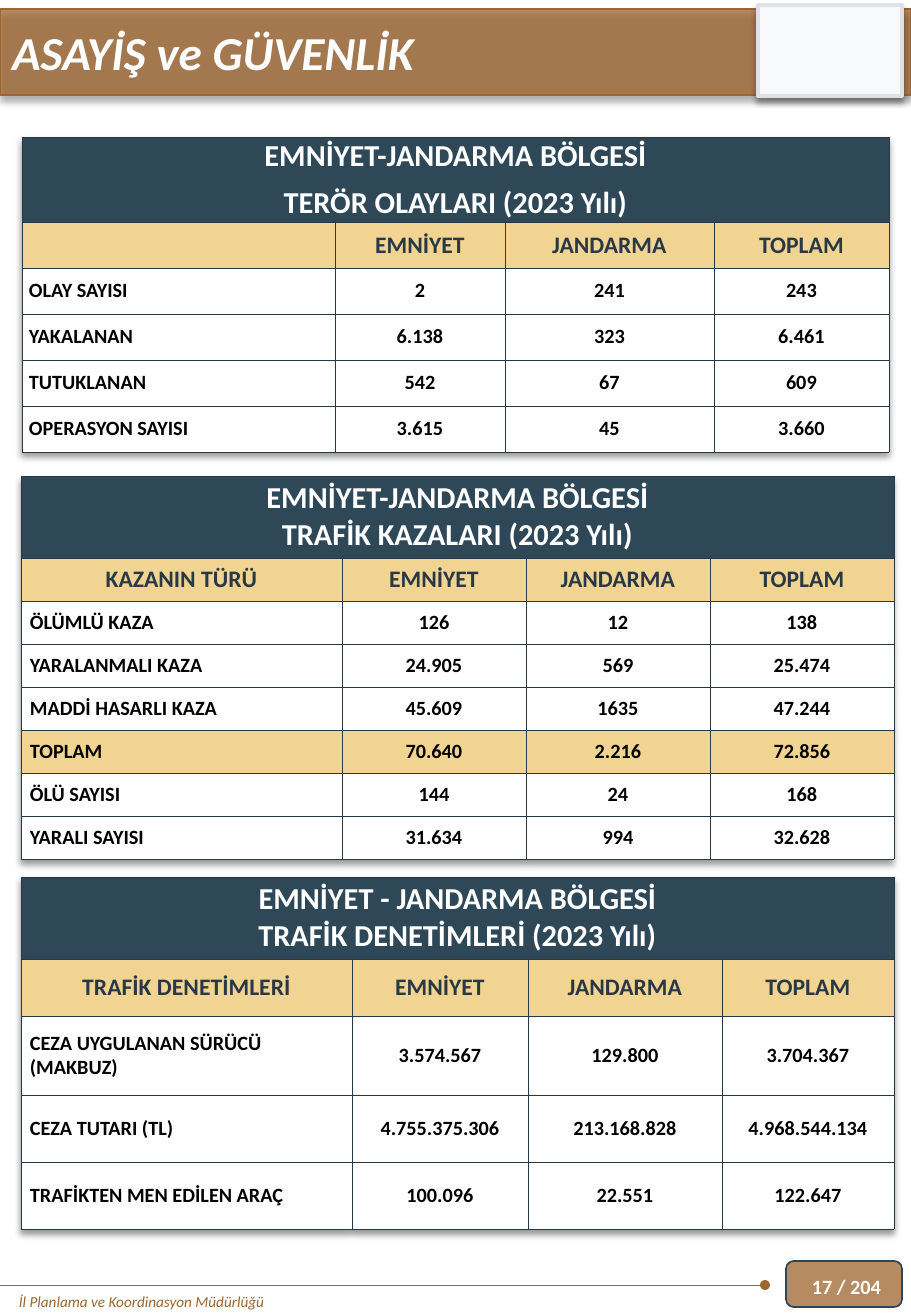
from dataclasses import dataclass

from lxml import etree
from pptx import Presentation
from pptx.dml.color import RGBColor
from pptx.enum.shapes import MSO_CONNECTOR, MSO_SHAPE
from pptx.enum.text import MSO_ANCHOR, MSO_AUTO_SIZE, PP_ALIGN
from pptx.oxml.ns import qn
from pptx.util import Pt

RECT = MSO_SHAPE.RECTANGLE
ROUND = MSO_SHAPE.ROUNDED_RECTANGLE
LINE = MSO_CONNECTOR.STRAIGHT
TOP = MSO_ANCHOR.TOP
MIDDLE = MSO_ANCHOR.MIDDLE
LEFT = PP_ALIGN.LEFT
CENTER = PP_ALIGN.CENTER
FIXED = MSO_AUTO_SIZE.NONE
SCALE = 914400 / 121.5


def px(n):
    return round(n * SCALE)


def rgb(code):
    return RGBColor.from_string(code)


def node(parent, tag, **attrs):
    return etree.SubElement(parent, qn(tag), attrs)


def shade(effects):
    drop = node(effects, "a:outerShdw", blurRad=str(Pt(4)), dist=str(Pt(3)),
                dir="5400000", algn="t", rotWithShape="0")
    color = node(drop, "a:srgbClr", val="000000")
    node(color, "a:alpha", val="40000")


@dataclass(frozen=True)
class Theme:
    font: str = "Calibri"
    brown: str = "9E652E"
    navy: str = "2F4858"
    ink: str = "283845"
    gold: str = "F2D492"
    white: str = "FFFFFF"
    black: str = "000000"
    pale: str = "F8F9FA"
    gray: str = "DEE2E6"
    title: int = 28
    head: int = 18
    label: int = 14
    body: int = 12
    foot: int = 9


class Deck:
    def __init__(self, theme, width, height):
        self.theme = theme
        self.prs = Presentation()
        self.prs.slide_width = px(width)
        self.prs.slide_height = px(height)
        self.slide = self.prs.slides.add_slide(self.prs.slide_layouts[5])

    def style(self, frame, size, color, align=LEFT, bold=True, italic=False, after=0):
        for par in frame.paragraphs:
            par.alignment = align
            par.space_after = Pt(after)
            font = par.font
            font.name = self.theme.font
            font.size = Pt(size)
            font.color.rgb = rgb(color)
            font.bold = bold
            font.italic = italic

    def title(self, text, *box):
        shape = self.slide.shapes.title
        shape.left, shape.top, shape.width, shape.height = map(px, box)
        frame = shape.text_frame
        frame.text = text
        frame.auto_size = FIXED
        frame.vertical_anchor = TOP
        self.style(frame, self.theme.title, self.theme.white, italic=True)
        shape.element.getparent().append(shape.element)

    def text(self, text, size, color, *box, anchor=TOP, **looks):
        frame = self.slide.shapes.add_textbox(*map(px, box)).text_frame
        frame.word_wrap = True
        frame.vertical_anchor = anchor
        frame.text = text
        self.style(frame, size, color, **looks)

    def block(self, kind, fill, edge, weight, *box, alpha=100, shadow=False):
        shape = self.slide.shapes.add_shape(kind, *map(px, box))
        shape.fill.solid()
        shape.fill.fore_color.rgb = rgb(fill)
        if alpha < 100:
            color = shape.element.spPr.find(qn("a:solidFill"))[0]
            node(color, "a:alpha", val=str(alpha * 1000))
        shape.line.color.rgb = rgb(edge)
        shape.line.width = Pt(weight)
        shape.shadow.inherit = False
        if shadow:
            shade(shape.element.spPr.find(qn("a:effectLst")))

    def rule(self, color, weight, *ends):
        line = self.slide.shapes.add_connector(LINE, *map(px, ends))
        line.line.color.rgb = rgb(color)
        line.line.width = Pt(weight)
        props = line.element.spPr
        node(props.find(qn("a:ln")), "a:headEnd", type="oval")
        node(props, "a:effectLst")

    def cell(self, cell, text, fill, size, color, align, pad, after=0):
        props = cell._tc.get_or_add_tcPr()
        for side in ("a:lnL", "a:lnR", "a:lnT", "a:lnB"):
            line = node(props, side, w=str(Pt(0.25)))
            node(node(line, "a:solidFill"), "a:srgbClr", val=self.theme.ink)
        cell.fill.solid()
        cell.fill.fore_color.rgb = rgb(fill)
        cell.margin_left = cell.margin_right = px(pad[0])
        cell.margin_top = cell.margin_bottom = px(pad[1])
        cell.vertical_anchor = MIDDLE
        cell.text = text
        self.style(cell.text_frame, size, color, align, after=after)

    def table(self, left, top, cols, rows, head, data, pad, after=0):
        t = self.theme
        grid = self.slide.shapes.add_table(
            len(rows), len(cols), px(left), px(top), px(sum(cols)), px(sum(rows))).table
        grid.first_row = grid.horz_banding = False
        effects = etree.Element(qn("a:effectLst"))
        shade(effects)
        grid._tbl.tblPr.insert(0, effects)
        for col, width in zip(grid.columns, cols):
            col.width = px(width)
        for row, height in zip(grid.rows, rows):
            row.height = px(height)
        grid.cell(0, 0).merge(grid.cell(0, len(cols) - 1))
        for c, text in enumerate([head, "", "", ""]):
            self.cell(grid.cell(0, c), text, t.navy, t.head, t.white, CENTER, pad, after)
        for r, line in enumerate(data, 1):
            fill = t.gold if r == 1 or line[0] == "TOPLAM" else t.white
            for c, text in enumerate(line):
                spot = grid.cell(r, c)
                if r == 1:
                    self.cell(spot, text, fill, t.label, t.ink, CENTER, pad)
                elif c == 0:
                    self.cell(spot, text, fill, t.body, t.black, LEFT, pad)
                else:
                    self.cell(spot, text, fill, t.body, t.black, CENTER, (1, 1))


def main():
    t = Theme()
    deck = Deck(t, 911, 1316)
    units = ("EMNİYET", "JANDARMA", "TOPLAM")

    deck.block(ROUND, t.brown, t.navy, 1, 786, 1261, 116, 46, alpha=75)
    deck.block(RECT, t.brown, t.brown, 1, 0, 9, 911, 86, alpha=75, shadow=True)
    deck.block(RECT, t.pale, t.gray, 2, 758, 5, 144, 91, shadow=True)
    deck.rule(t.brown, 0.5, 765, 1285, 0, 1285)
    deck.text("İl Planlama ve Koordinasyon Müdürlüğü", t.foot, t.brown,
              7, 1286, 570, 30, bold=False, italic=True)

    deck.table(22, 137, (313, 170, 209, 175), (85,) + (46,) * 5,
               "EMNİYET-JANDARMA BÖLGESİ\nTERÖR OLAYLARI (2023 Yılı)", (
                   ("", *units),
                   ("OLAY SAYISI", "2", "241", "243"),
                   ("YAKALANAN", "6.138", "323", "6.461"),
                   ("TUTUKLANAN", "542", "67", "609"),
                   ("OPERASYON SAYISI", "3.615", "45", "3.660"),
               ), (7, 0), after=6)
    deck.table(21, 476, (321, 184, 184, 184), (82,) + (43,) * 7,
               "EMNİYET-JANDARMA BÖLGESİ\nTRAFİK KAZALARI (2023 Yılı)", (
                   ("KAZANIN TÜRÜ", *units),
                   ("ÖLÜMLÜ KAZA", "126", "12", "138"),
                   ("YARALANMALI KAZA", "24.905", "569", "25.474"),
                   ("MADDİ HASARLI KAZA", "45.609", "1635", "47.244"),
                   ("TOPLAM", "70.640", "2.216", "72.856"),
                   ("ÖLÜ SAYISI", "144", "24", "168"),
                   ("YARALI SAYISI", "31.634", "994", "32.628"),
               ), (9, 4))
    deck.table(21, 877, (331, 176, 194, 172), (82, 57, 79, 67, 67),
               "EMNİYET - JANDARMA BÖLGESİ\nTRAFİK DENETİMLERİ (2023 Yılı)", (
                   ("TRAFİK DENETİMLERİ", *units),
                   ("CEZA UYGULANAN SÜRÜCÜ\n(MAKBUZ)", "3.574.567", "129.800", "3.704.367"),
                   ("CEZA TUTARI (TL)", "4.755.375.306", "213.168.828", "4.968.544.134"),
                   ("TRAFİKTEN MEN EDİLEN ARAÇ", "100.096", "22.551", "122.647"),
               ), (9, 4))

    deck.title("ASAYİŞ ve GÜVENLİK", 0, 17, 911, 69)
    deck.text("17 / 204", t.body, t.white, 800, 1261, 102, 51, anchor=MIDDLE)
    deck.prs.save("out.pptx")


if __name__ == "__main__":
    main()
